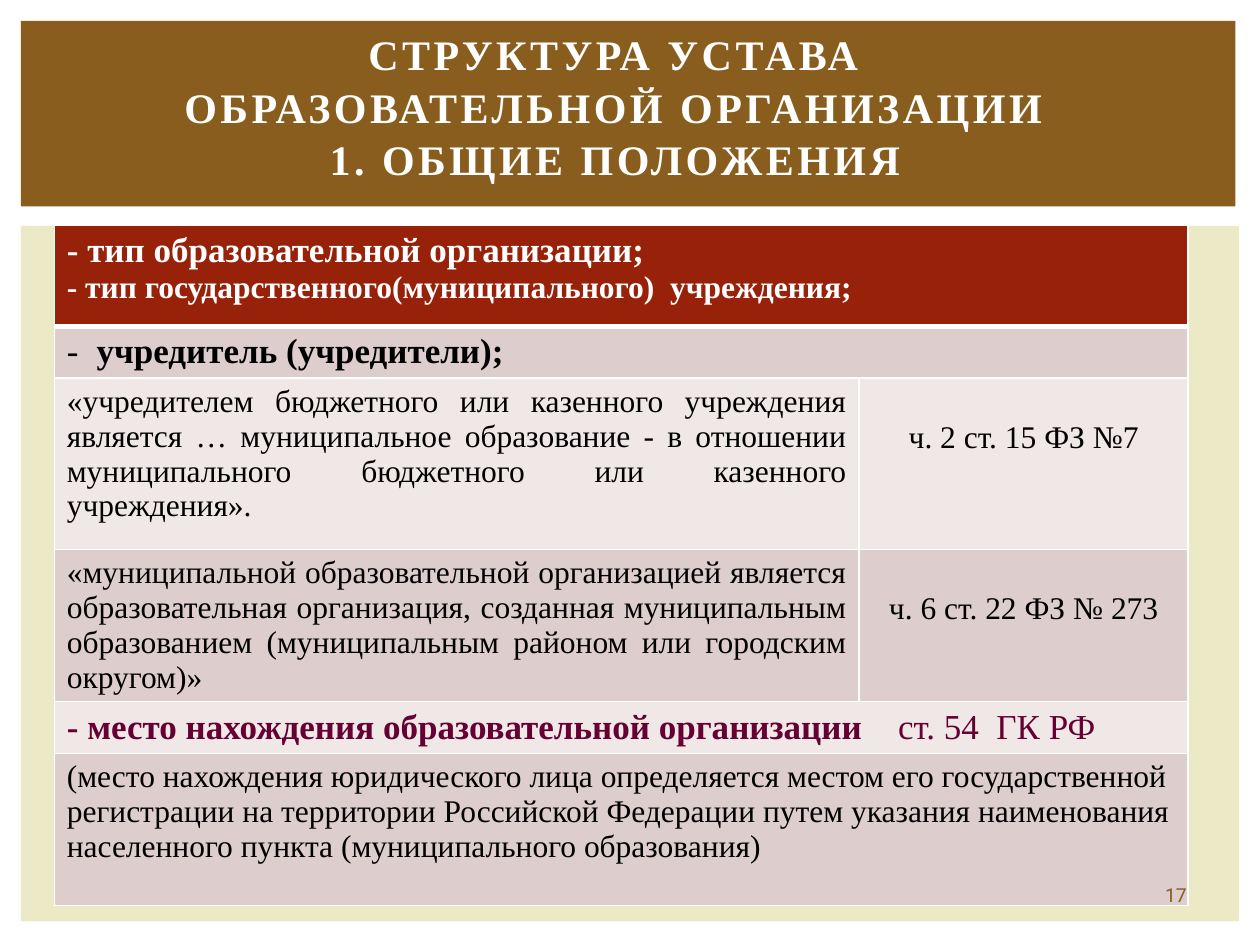
from lxml.etree import SubElement
from pptx import Presentation
from pptx.dml.color import RGBColor
from pptx.enum.shapes import MSO_SHAPE as Shape
from pptx.enum.text import MSO_ANCHOR as Anchor, MSO_AUTO_SIZE as AutoSize, PP_ALIGN as Align
from pptx.oxml.ns import qn
from pptx.util import Pt

WHITE = RGBColor(0xFF, 0xFF, 0xFF)
BLACK = RGBColor(0, 0, 0)
BROWN = RGBColor(0x89, 0x5D, 0x1D)
CREAM = RGBColor(0xEC, 0xE9, 0xC6)
RED = RGBColor(0x97, 0x21, 0x09)
ROSE = RGBColor(0xDD, 0xCD, 0xCC)
PALE = RGBColor(0xEF, 0xE8, 0xE7)
PLUM = RGBColor(0x66, 0x00, 0x33)
SERIF = "Times New Roman"

TITLE_LINES = ["СТРУКТУРА УСТАВА", "ОБРАЗОВАТЕЛЬНОЙ ОРГАНИЗАЦИИ", "1. ОБЩИЕ ПОЛОЖЕНИЯ"]
COLUMN_WIDTHS = [460, 188]
ROW_HEIGHTS = [58, 29.5, 98, 87, 29.5, 87]
ROW_FILLS = [RED, ROSE, PALE, ROSE, PALE, ROSE]
FULL_WIDTH_ROWS = [0, 1, 4, 5]
REFERENCE_TOP = 24


def add_span(para, text, size, color, bold=False, font=SERIF):
    span = para.add_run()
    span.text = text
    span.font.size = Pt(size)
    span.font.name = font
    span.font.bold = bold
    span.font.color.rgb = color
    return span


def add_panel(page, left, top, width, height, color):
    panel = page.shapes.add_shape(Shape.RECTANGLE, Pt(left), Pt(top), Pt(width), Pt(height))
    panel.shadow.inherit = False
    panel.fill.solid()
    panel.fill.fore_color.rgb = color
    panel.line.fill.background()
    return panel


def format_title(title):
    title.left, title.top, title.width, title.height = Pt(20), Pt(21), Pt(663), Pt(78)
    frame = title.text_frame
    frame.auto_size = AutoSize.NONE
    frame.vertical_anchor = Anchor.MIDDLE
    para = frame.paragraphs[0]
    para.alignment = Align.CENTER
    para.line_spacing = 1.05
    for index, line in enumerate(TITLE_LINES):
        if index:
            para.add_line_break()
        span = add_span(para, line, 24, WHITE, True)
        span.font._element.set("spc", "200")


def set_borders(cell, bottom_width):
    """Draw white cell borders; call before the fill is set, as XML order matters."""
    properties = cell._tc.get_or_add_tcPr()
    for side, width in (("L", 1), ("R", 1), ("T", 1), ("B", bottom_width)):
        line = SubElement(properties, qn(f"a:ln{side}"), w=str(Pt(width)))
        fill = SubElement(line, qn("a:solidFill"))
        SubElement(fill, qn("a:srgbClr"), val=str(WHITE))


def set_tab(para, position):
    tabs = SubElement(para._p.get_or_add_pPr(), qn("a:tabLst"))
    SubElement(tabs, qn("a:tab"), pos=str(Pt(position)), algn="l")


def write_cell(cell, *spans, align=Align.LEFT, tab=None):
    """Write one paragraph of (text, size, color, bold) spans."""
    para = cell.text_frame.paragraphs[0]
    para.alignment = align
    if tab:
        set_tab(para, tab)
    for span in spans:
        add_span(para, *span)


def write_quote(table, row, quote, reference):
    write_cell(table.cell(row, 0), (quote, 18, BLACK), align=Align.JUSTIFY)
    cell = table.cell(row, 1)
    cell.margin_top = Pt(REFERENCE_TOP)
    write_cell(cell, (reference, 18, BLACK), align=Align.CENTER)


def add_grid(page):
    table = page.shapes.add_table(
        len(ROW_HEIGHTS), len(COLUMN_WIDTHS), Pt(31), Pt(128.5),
        Pt(sum(COLUMN_WIDTHS)), Pt(sum(ROW_HEIGHTS))).table
    for column, width in zip(table.columns, COLUMN_WIDTHS):
        column.width = Pt(width)
    for index, (row, height, color) in enumerate(zip(table.rows, ROW_HEIGHTS, ROW_FILLS)):
        row.height = Pt(height)
        for cell in row.cells:
            set_borders(cell, 1 if index else 3)
            cell.fill.solid()
            cell.fill.fore_color.rgb = color
    for index in FULL_WIDTH_ROWS:
        table.cell(index, 0).merge(table.cell(index, 1))
    return table


def fill_grid(table):
    header = table.cell(0, 0)
    write_cell(header, ("- тип образовательной организации;", 20, WHITE, True))
    add_span(header.text_frame.add_paragraph(),
             "- тип государственного(муниципального)  учреждения;", 18, WHITE, True)
    write_cell(table.cell(1, 0), ("-\t", 20, BLACK),
               ("учредитель (учредители);", 20, BLACK, True), tab=17)
    write_quote(table, 2,
                "«учредителем бюджетного или казенного учреждения является … муниципальное "
                "образование - в отношении муниципального бюджетного или казенного учреждения».",
                "ч. 2 ст. 15 ФЗ №7")
    write_quote(table, 3,
                "«муниципальной образовательной организацией является образовательная "
                "организация, созданная муниципальным образованием (муниципальным районом "
                "или городским округом)»",
                "ч. 6 ст. 22 ФЗ № 273")
    write_cell(table.cell(4, 0),
               ("- место нахождения образовательной организации\t", 20, PLUM, True),
               ("ст. 54  ГК РФ", 20, PLUM), tab=475)
    write_cell(table.cell(5, 0),
               ("(место нахождения юридического лица определяется местом его государственной "
                "регистрации на территории Российской Федерации путем указания наименования "
                "населенного пункта (муниципального образования)", 18, BLACK))


def add_page_number(page):
    box = page.shapes.add_textbox(Pt(649), Pt(500.5), Pt(46), Pt(21.5))
    frame = box.text_frame
    frame.word_wrap = True
    frame.vertical_anchor = Anchor.MIDDLE
    para = frame.paragraphs[0]
    para.alignment = Align.CENTER
    add_span(para, "17", 11, BROWN, font="Roboto")


def main():
    deck = Presentation()
    deck.slide_width, deck.slide_height = Pt(720), Pt(540)
    page = deck.slides.add_slide(deck.slide_layouts[5])
    add_panel(page, 12, 129, 696, 397.5, CREAM)
    banner = add_panel(page, 12, 12, 694, 106, BROWN)
    title = page.shapes.title
    format_title(title)
    banner._element.addnext(title._element)
    fill_grid(add_grid(page))
    add_page_number(page)
    deck.save("out.pptx")


if __name__ == "__main__":
    main()
